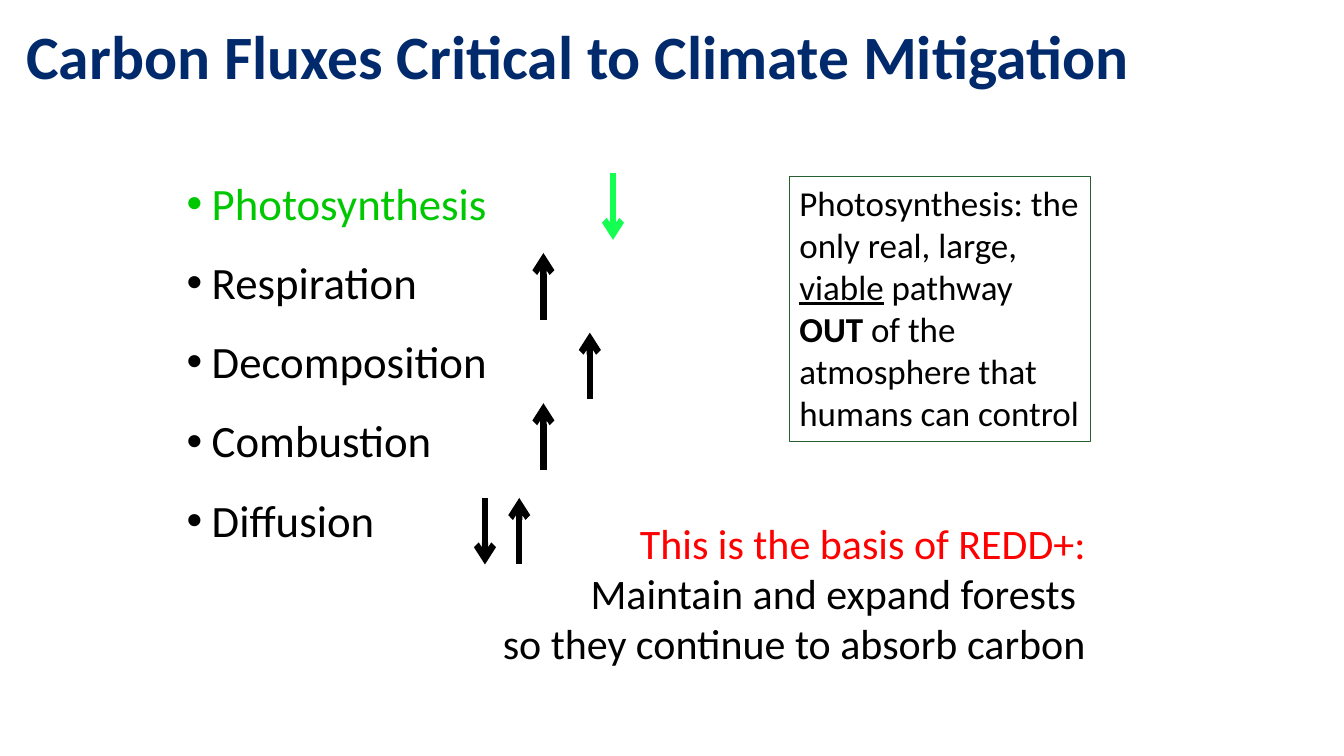
from lxml.etree import SubElement
from pptx import Presentation
from pptx.dml.color import RGBColor
from pptx.enum.shapes import MSO_CONNECTOR as CONN, MSO_SHAPE as SHAPE
from pptx.enum.text import MSO_ANCHOR as ANCHOR, MSO_AUTO_SIZE as FIT, PP_ALIGN as ALIGN
from pptx.oxml.ns import qn
from pptx.util import Inches, Pt

BLACK, GREEN, RED, NAVY = "000000", "00C800", "FF0000", "002A6C"
ARROW_LENGTH = 0.66


def rgb(hex_code):
    """Turn a hex string into a colour."""
    return RGBColor.from_string(hex_code)


def place(sp, left, top, width, height):
    """Set a shape's position and size in inches."""
    sp.left, sp.top = Inches(left), Inches(top)
    sp.width, sp.height = Inches(width), Inches(height)


def style(r, size, color, bold=None, underline=None):
    """Format one run."""
    r.font.name, r.font.size = "Calibri", Pt(size)
    r.font.color.rgb = rgb(color)
    r.font.bold, r.font.underline = bold, underline


def add_title(s, text):
    """Fill the title placeholder."""
    sp = s.shapes.title
    place(sp, 0.16, 0, 12.99, 1.18)
    tf = sp.text_frame
    tf.text = text
    tf.auto_size, tf.vertical_anchor = FIT.NONE, ANCHOR.MIDDLE
    p = tf.paragraphs[0]
    p.alignment, p.line_spacing = ALIGN.LEFT, 0.9
    style(p.runs[0], 44, NAVY, bold=True)


def add_bullets(s, items):
    """Fill the body placeholder with coloured bullets."""
    sp = s.placeholders[1]
    place(sp, 1.75, 1.75, 4.1, 4.95)
    tf = sp.text_frame
    tf.text = "\n".join(text for text, _ in items)
    tf.auto_size = FIT.NONE
    for i, (p, (_, color)) in enumerate(zip(tf.paragraphs, items)):
        pPr = p._p.get_or_add_pPr()
        pPr.set("marL", str(Inches(0.25)))
        pPr.set("indent", str(Inches(-0.25)))
        SubElement(pPr, qn("a:buFont"), typeface="Arial")
        SubElement(pPr, qn("a:buChar"), char="•")
        p.line_spacing, p.space_after = 0.9, Pt(12)
        p.space_before = Pt(10 if i else 0)
        style(p.runs[0], 32, color)


def add_arrow(s, x, top, up=True, color=BLACK):
    """Draw a vertical arrow pointing up or down."""
    start, end = (top + ARROW_LENGTH, top) if up else (top, top + ARROW_LENGTH)
    line = s.shapes.add_connector(CONN.STRAIGHT, Inches(x), Inches(start), Inches(x), Inches(end))
    line.line.color.rgb, line.line.width = rgb(color), Pt(4.5)
    SubElement(line.line._get_or_add_ln(), qn("a:tailEnd"), type="arrow")
    SubElement(line._element.spPr, qn("a:effectLst"))


def add_conclusion(s, lines):
    """Add right-aligned lines, each in its own colour."""
    sp = s.shapes.add_textbox(0, 0, 0, 0)
    place(sp, 4.81, 5.08, 6.06, 1.62)
    tf = sp.text_frame
    tf.text = "\n".join(text for text, _ in lines)
    tf.word_wrap, tf.auto_size = False, FIT.SHAPE_TO_FIT_TEXT
    for p, (_, color) in zip(tf.paragraphs, lines):
        p.alignment = ALIGN.RIGHT
        style(p.runs[0], 30, color)


def add_callout(s, parts):
    """Add the outlined box with mixed emphasis."""
    sp = s.shapes.add_shape(SHAPE.RECTANGLE, 0, 0, 0, 0)
    place(sp, 7.83, 1.75, 2.99, 2.63)
    sp.shadow.inherit = False
    sp.fill.background()
    sp.line.color.rgb, sp.line.width = rgb("285F30"), Pt(0.75)
    tf = sp.text_frame
    tf.word_wrap, tf.auto_size = True, FIT.SHAPE_TO_FIT_TEXT
    tf.vertical_anchor = ANCHOR.TOP
    p = tf.paragraphs[0]
    p.alignment = ALIGN.LEFT
    for text, emphasis in parts:
        r = p.add_run()
        r.text = text
        style(r, 25, BLACK, **emphasis)


def main():
    """Build and save the slide."""
    prs = Presentation()
    prs.slide_width, prs.slide_height = Inches(13.33), Inches(7.5)
    s = prs.slides.add_slide(prs.slide_layouts[1])
    add_title(s, "Carbon Fluxes Critical to Climate Mitigation")
    add_bullets(s, [("Photosynthesis", GREEN), ("Respiration", BLACK), ("Decomposition", BLACK),
                    ("Combustion", BLACK), ("Diffusion", BLACK)])
    add_arrow(s, 6.08, 1.72, up=False, color="15FF52")
    add_arrow(s, 4.81, 4.94, up=False)
    for x, top in [(5.85, 3.3), (5.39, 2.51), (5.39, 4), (5.15, 4.94)]:
        add_arrow(s, x, top)
    add_conclusion(s, [("This is the basis of REDD+:", RED),
                       ("Maintain and expand forests ", BLACK),
                       ("so they continue to absorb carbon", BLACK)])
    add_callout(s, [("Photosynthesis: the only real, large, ", {}),
                    ("viable", {"underline": True}),
                    (" pathway ", {}),
                    ("OUT ", {"bold": True}),
                    ("of the atmosphere that humans can control", {})])
    prs.save("out.pptx")


if __name__ == "__main__":
    main()
